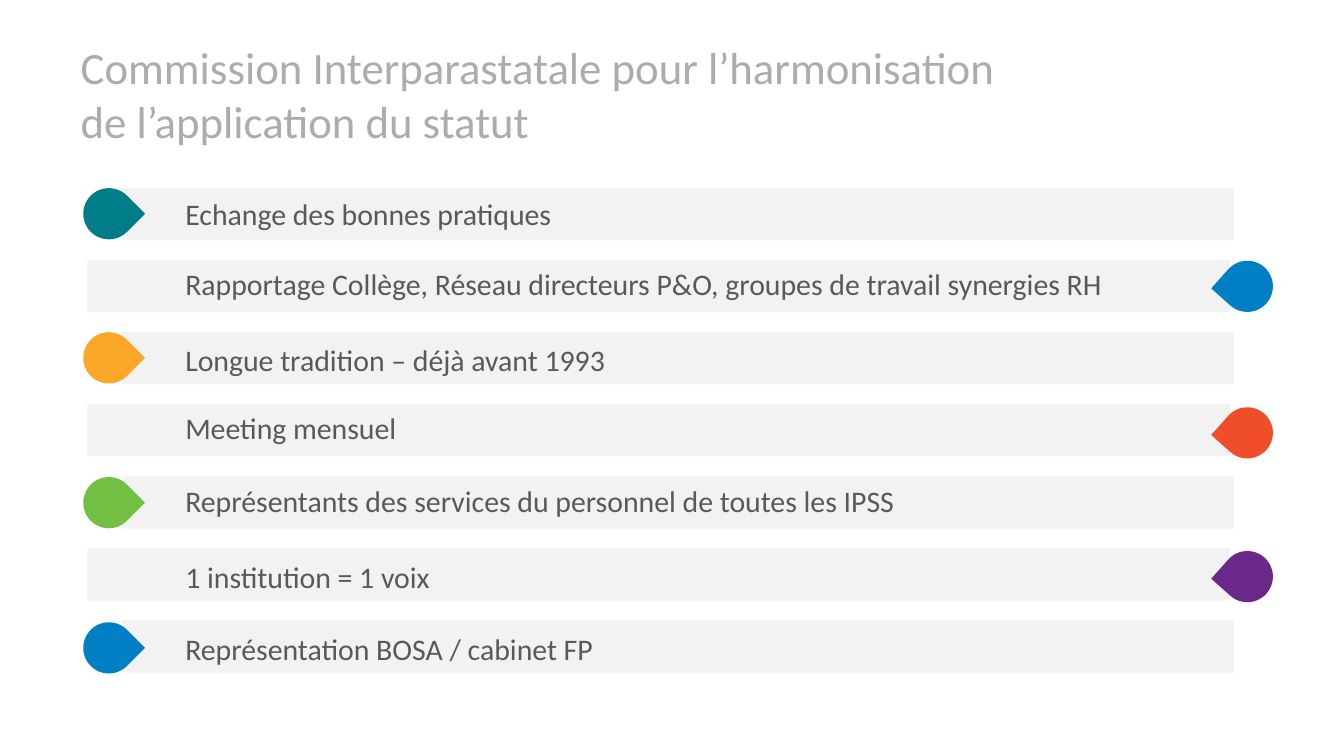
"""Build the slide on the Commission Interparastatale."""
from dataclasses import dataclass

from pptx import Presentation
from pptx.dml.color import RGBColor
from pptx.enum.shapes import MSO_SHAPE
from pptx.enum.text import MSO_ANCHOR, PP_ALIGN
from pptx.shapes.autoshape import Shape
from pptx.slide import Slide
from pptx.util import Pt


@dataclass(frozen=True)
class Theme:
    font: str = "Calibri"
    title_size: float = 24
    label_size: float = 16
    title: str = "ACACAC"
    label: str = "595959"
    band: str = "F2F2F2"
    teal: str = "007D89"
    blue: str = "007FC5"
    amber: str = "FAA627"
    red: str = "F04E29"
    green: str = "72BF44"
    purple: str = "6A288A"


@dataclass(frozen=True)
class Side:
    band_left: float
    band_width: float
    drop_left: float
    rotation: float


@dataclass(frozen=True)
class Row:
    label: str
    color: str
    label_shift: float
    drop_shift: float


THEME = Theme()
LEFT = Side(65.5, 595.5, 44.6, 45)
RIGHT = Side(46.8, 612, 654.5, 221.7)
FIRST_TOP, PITCH = 100.8, 38.6
BAND_HEIGHT, DROP_SIZE = 28, 27.4
LABEL_LEFT, LABEL_WIDTH, LABEL_HEIGHT = 92.2, 566.6, 26.6

TITLE = "Commission Interparastatale pour l’harmonisation\vde l’application du statut"
ROWS = [
    Row("Echange des bonnes pratiques", THEME.teal, 0.7, 0),
    Row("Rapportage Collège, Réseau directeurs P&O, groupes de travail synergies RH",
        THEME.blue, -0.4, 0.3),
    Row("Longue tradition – déjà avant 1993", THEME.amber, 1.3, 0),
    Row("Meeting mensuel", THEME.red, -0.6, 1.6),
    Row("Représentants des services du personnel de toutes les IPSS",
        THEME.green, -0.3, 0.4),
    Row("1 institution = 1 voix", THEME.purple, 2.1, 1.4),
    Row("Représentation BOSA / cabinet FP", THEME.blue, 1.7, 1),
]


def write(shape: Shape, text: str, *, size: float, color: str,
          anchor: MSO_ANCHOR = MSO_ANCHOR.TOP) -> None:
    """Put formatted, left-aligned text into a shape."""
    frame = shape.text_frame
    frame.word_wrap = True
    frame.vertical_anchor = anchor
    frame.text = text
    paragraph = frame.paragraphs[0]
    paragraph.alignment = PP_ALIGN.LEFT
    for run in paragraph.runs:
        run.font.name = THEME.font
        run.font.size = Pt(size)
        run.font.color.rgb = RGBColor.from_string(color)


def add_filled(slide: Slide, kind: MSO_SHAPE, left: float, top: float,
               width: float, height: float, color: str) -> Shape:
    """Add a flat shape without outline or shadow."""
    shape = slide.shapes.add_shape(kind, Pt(left), Pt(top), Pt(width), Pt(height))
    shape.shadow.inherit = False
    shape.fill.solid()
    shape.fill.fore_color.rgb = RGBColor.from_string(color)
    shape.line.fill.background()
    return shape


def add_row(slide: Slide, row: Row, side: Side, top: float) -> None:
    """Draw one band with its coloured drop and label."""
    add_filled(slide, MSO_SHAPE.RECTANGLE, side.band_left, top,
               side.band_width, BAND_HEIGHT, THEME.band)
    drop = add_filled(slide, MSO_SHAPE.TEAR, side.drop_left, top + row.drop_shift,
                      DROP_SIZE, DROP_SIZE, row.color)
    drop.rotation = side.rotation
    label = slide.shapes.add_textbox(Pt(LABEL_LEFT), Pt(top + row.label_shift),
                                     Pt(LABEL_WIDTH), Pt(LABEL_HEIGHT))
    write(label, row.label, size=THEME.label_size, color=THEME.label)


def main() -> None:
    """Create and save the presentation."""
    presentation = Presentation()
    presentation.slide_width, presentation.slide_height = Pt(720), Pt(405)
    slide = presentation.slides.add_slide(presentation.slide_layouts[5])
    title = slide.shapes.title
    title.left, title.top, title.width, title.height = Pt(36), Pt(16.5), Pt(648), Pt(67.5)
    write(title, TITLE, size=THEME.title_size, color=THEME.title,
          anchor=MSO_ANCHOR.MIDDLE)
    for index, row in enumerate(ROWS):
        add_row(slide, row, RIGHT if index % 2 else LEFT, FIRST_TOP + index * PITCH)
    presentation.save("out.pptx")


if __name__ == "__main__":
    main()
